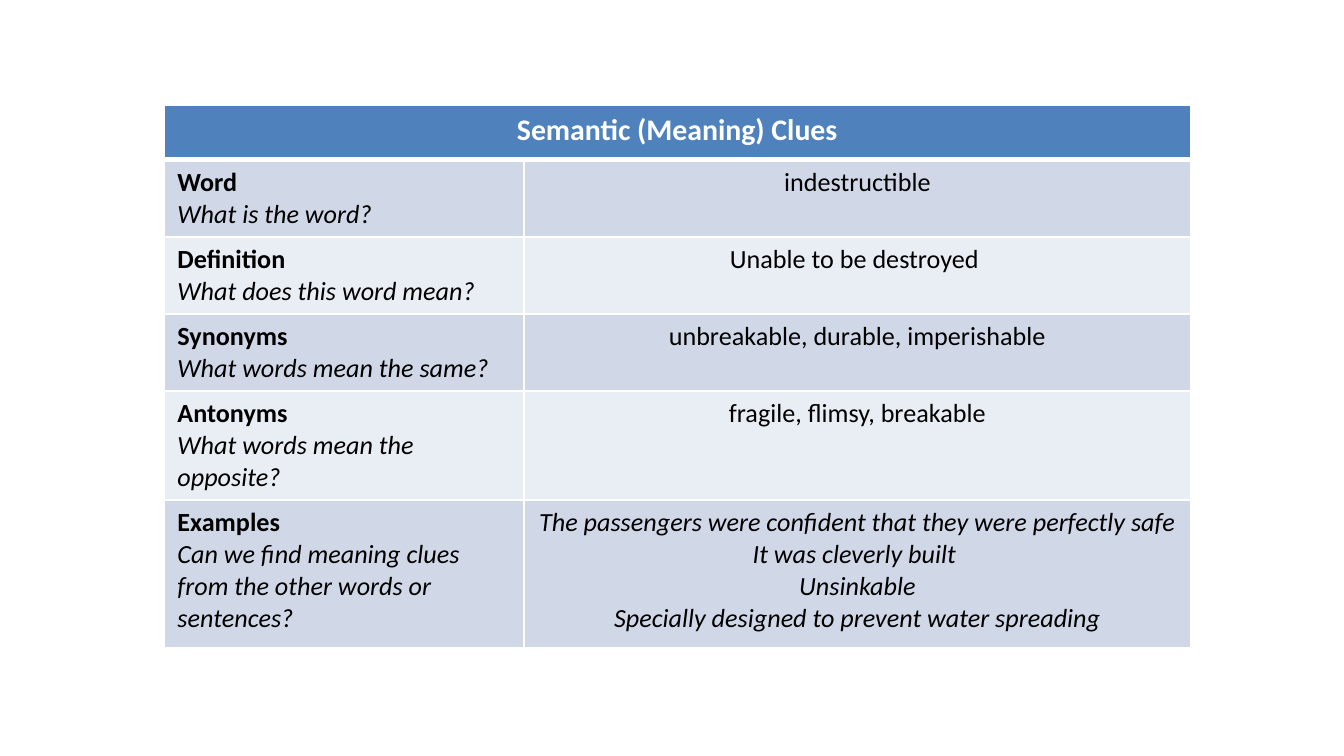
from dataclasses import dataclass

from lxml.etree import SubElement
from pptx import Presentation
from pptx.dml.color import RGBColor
from pptx.enum.text import PP_ALIGN as Align
from pptx.oxml.ns import qn
from pptx.table import _Cell as Cell
from pptx.util import Inches, Pt

WHITE = "FFFFFF"
BLACK = "000000"
HEADER_FILL = "4F81BD"
BAND_FILLS = ("D0D8E8", "E9EDF4")
COLUMN_WIDTHS = (2.68, 4.96)
HEADER_HEIGHT = 0.41
TABLE_HEIGHT = 4.01


@dataclass
class Clue:
    label: str
    question: str
    answers: list[str]
    height: float = 0.5
    italic: bool = False


CLUES = [
    Clue("Word", "What is the word?", ["indestructible"]),
    Clue("Definition", "What does this word mean?", ["Unable to be destroyed "]),
    Clue("Synonyms", "What words mean the same?", ["unbreakable, durable, imperishable"]),
    Clue("Antonyms", "What words mean the opposite?", ["fragile, flimsy, breakable"]),
    Clue(
        "Examples",
        "Can we find meaning clues from the other words or sentences?",
        [
            "The passengers were confident that they were perfectly safe",
            "It was cleverly built ",
            "Unsinkable",
            "Specially designed to prevent water spreading",
        ],
        height=1.1,
        italic=True,
    ),
]


@dataclass
class Line:
    text: str
    bold: bool = False
    italic: bool = False
    size: int = 14
    color: str = BLACK


def rgb(value: str) -> RGBColor:
    return RGBColor.from_string(value)


def style_cell(cell: Cell, fill: str, top: int = 1, bottom: int = 1) -> None:
    properties = cell._tc.get_or_add_tcPr()
    for side, width in (("L", 1), ("R", 1), ("T", top), ("B", bottom)):
        border = SubElement(properties, qn(f"a:ln{side}"), w=str(Pt(width)))
        solid = SubElement(border, qn("a:solidFill"))
        SubElement(solid, qn("a:srgbClr"), val=WHITE)
    cell.fill.solid()
    cell.fill.fore_color.rgb = rgb(fill)


def write_lines(cell: Cell, lines: list[Line], align: Align) -> None:
    frame = cell.text_frame
    for index, line in enumerate(lines):
        para = frame.add_paragraph() if index else frame.paragraphs[0]
        para.alignment = align
        span = para.add_run()
        span.text = line.text
        span.font.name = "Calibri"
        span.font.size = Pt(line.size)
        span.font.bold = line.bold
        span.font.italic = line.italic
        span.font.color.rgb = rgb(line.color)


def main() -> None:
    deck = Presentation()
    deck.slide_width = Inches(10)
    deck.slide_height = Inches(10 * 9 / 16)
    page = deck.slides.add_slide(deck.slide_layouts[6])

    heights = [HEADER_HEIGHT] + [clue.height for clue in CLUES]
    holder = page.shapes.add_table(
        len(heights), len(COLUMN_WIDTHS), Inches(1.22), Inches(0.78),
        Inches(sum(COLUMN_WIDTHS)), Inches(TABLE_HEIGHT),
    )
    table = holder.table
    for column, width in zip(table.columns, COLUMN_WIDTHS):
        column.width = Inches(width)
    for row, height in zip(table.rows, heights):
        row.height = Inches(height)
    holder.height = Inches(TABLE_HEIGHT)

    title = table.cell(0, 0)
    title.merge(table.cell(0, 1))
    for cell in table.rows[0].cells:
        style_cell(cell, HEADER_FILL, bottom=3)
    heading = Line("Semantic (Meaning) Clues", bold=True, size=16, color=WHITE)
    write_lines(title, [heading], Align.CENTER)

    for index, clue in enumerate(CLUES):
        prompt, answer = table.rows[index + 1].cells
        for cell in (prompt, answer):
            style_cell(cell, BAND_FILLS[index % 2], top=1 if index else 3)
        write_lines(
            prompt,
            [Line(clue.label, bold=True), Line(clue.question, italic=True)],
            Align.LEFT,
        )
        write_lines(
            answer,
            [Line(text, italic=clue.italic) for text in clue.answers],
            Align.CENTER,
        )

    deck.save("out.pptx")


if __name__ == "__main__":
    main()
